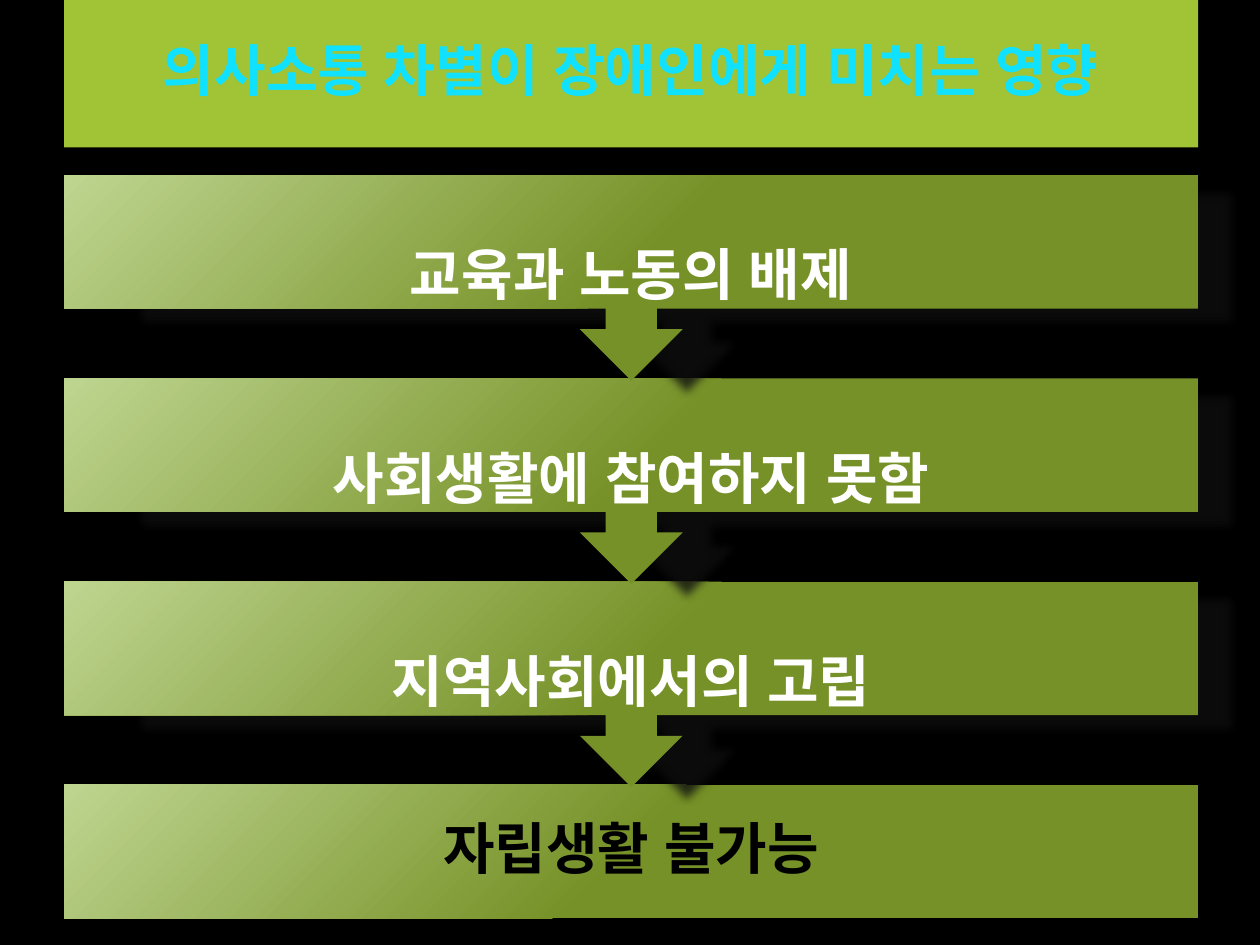
from lxml import etree
from pptx import Presentation
from pptx.dml.color import RGBColor
from pptx.enum.shapes import MSO_SHAPE
from pptx.enum.text import MSO_ANCHOR, PP_ALIGN
from pptx.oxml.ns import qn
from pptx.util import Inches, Pt

RECT = MSO_SHAPE.RECTANGLE
CALLOUT = MSO_SHAPE.UP_ARROW_CALLOUT
MIDDLE = MSO_ANCHOR.MIDDLE
CENTER = PP_ALIGN.CENTER

LEFT, WIDTH = 0.51, 9
FIRST_TOP, LAST_TOP = 1.39, 6.23
CALLOUT_H, LAST_H = 1.63, 1.06
STEPS = ["교육과 노동의 배제", "사회생활에 참여하지 못함", "지역사회에서의 고립"]
RESULT = "자립생활 불가능"


def rgb(value):
    return RGBColor.from_string(value)


class Deck:
    font, size, inset = "Noto Sans", 32, 0.25
    dark, light, shade = "769127", "BED590", "0F0F0F"

    def __init__(self, slide):
        self.slide = slide

    def background(self, color):
        fill = self.slide.background.fill
        fill.solid()
        fill.fore_color.rgb = rgb(color)

    def shape(self, kind, top, height):
        sp = self.slide.shapes.add_shape(
            kind, Inches(LEFT), Inches(top), Inches(WIDTH), Inches(height))
        sp.shadow.inherit = False
        sp.line.fill.background()
        return sp

    def gradient(self, sp):
        """Fade from the light top-left corner, whatever the shape's rotation."""
        sp.fill.gradient()
        sp.fill.gradient_angle = 135
        stops = zip(sp.fill.gradient_stops, ((0.5, self.dark), (1, self.light)))
        for stop, (position, color) in stops:
            stop.position = position
            stop.color.rgb = rgb(color)
        sp._element.spPr.find(qn("a:gradFill")).set("rotWithShape", "0")

    def shadow(self, sp):
        effects = sp._element.spPr.find(qn("a:effectLst"))
        outer = etree.SubElement(
            effects, qn("a:outerShdw"), blurRad=str(Pt(5)), dist=str(Pt(5)),
            dir="600000", sx="96000", sy="96000", rotWithShape="0")
        color = etree.SubElement(outer, qn("a:srgbClr"), val=self.shade)
        etree.SubElement(color, qn("a:alpha"), val="78000")

    def label(self, sp, text, color):
        tf = sp.text_frame
        tf.word_wrap = True
        tf.vertical_anchor = MIDDLE
        tf.margin_left = tf.margin_right = Inches(self.inset)
        tf.margin_top = tf.margin_bottom = Inches(self.inset)
        p = tf.paragraphs[0]
        p.text = text
        p.alignment = CENTER
        p.line_spacing = 0.9
        p.font.size = Pt(self.size)
        p.font.bold = True
        p.font.color.rgb = rgb(color)
        p.font.name = self.font
        props = p._p.pPr.find(qn("a:defRPr"))
        etree.SubElement(props, qn("a:ea"), typeface=self.font)

    def title(self, text):
        sp = self.shape(RECT, 0, 1.17)
        sp.fill.solid()
        sp.fill.fore_color.rgb = rgb("A0C435")
        self.label(sp, text, "10E1FF")

    def result(self, text):
        sp = self.shape(RECT, LAST_TOP, LAST_H)
        self.gradient(sp)
        self.label(sp, text, "000000")

    def step(self, text, top):
        """Callout turned to point down, with upright text over it."""
        sp = self.shape(CALLOUT, top, CALLOUT_H)
        sp.rotation = 180
        self.gradient(sp)
        self.shadow(sp)
        box = self.slide.shapes.add_textbox(
            Inches(LEFT), Inches(top), Inches(WIDTH), Inches(CALLOUT_H))
        self.label(box, text, "FFFFFF")


def main():
    prs = Presentation()
    prs.slide_width, prs.slide_height = Inches(10), Inches(7.5)
    deck = Deck(prs.slides.add_slide(prs.slide_layouts[6]))
    deck.background("000000")
    deck.title("의사소통 차별이 장애인에게 미치는 영향")
    deck.result(RESULT)
    pitch = (LAST_TOP - FIRST_TOP) / len(STEPS)
    # Bottom step first, so each arrow tip lies over the step below it
    for i, text in reversed(list(enumerate(STEPS))):
        deck.step(text, FIRST_TOP + i * pitch)
    prs.save("out.pptx")


if __name__ == "__main__":
    main()
